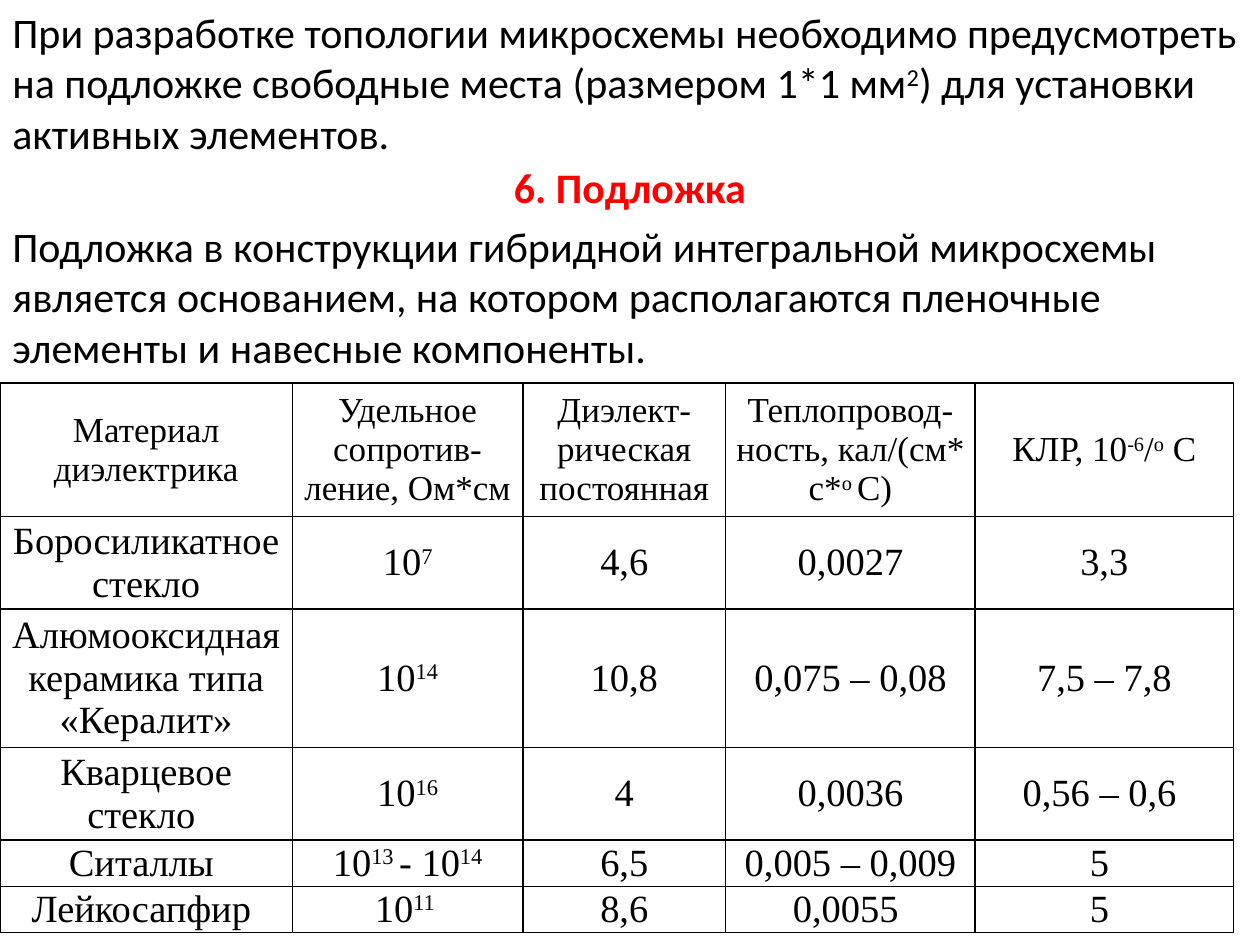
from lxml.etree import SubElement
from pptx import Presentation
from pptx.dml.color import RGBColor
from pptx.enum.text import MSO_ANCHOR, MSO_AUTO_SIZE, PP_ALIGN
from pptx.oxml.ns import qn
from pptx.util import Inches, Pt

COLORS = {"text": "000000", "heading": "FF0000", "border": "000000"}
BODY_FONT, TABLE_FONT = "Calibri", "Times New Roman"

# Text between ^ marks is superscript.
HEADING = "6. Подложка"
PARAGRAPHS = [
    (0, "При разработке топологии микросхемы необходимо предусмотреть на подложке "
        "свободные места (размером 1*1 мм^2^) для установки активных элементов."),
    (1.7, "Подложка в конструкции гибридной интегральной микросхемы является основанием, "
          "на котором располагаются пленочные элементы и навесные компоненты."),
]
MATERIALS = [
    ["Материал диэлектрика", "Удельное сопротив-ление, Ом*см",
     "Диэлект-рическая постоянная", "Теплопровод-ность, кал/(см* с*^о ^С)",
     "КЛР, 10^-6^/^о^ С"],
    ["Боросиликатное стекло", "10^7^", "4,6", "0,0027", "3,3"],
    ["Алюмооксидная керамика типа «Кералит»", "10^14^", "10,8", "0,075 – 0,08", "7,5 – 7,8"],
    ["Кварцевое стекло ", "10^16^", "4", "0,0036", "0,56 – 0,6 "],
    ["Ситаллы ", "10^13 ^- 10^14^", "6,5", "0,005 – 0,009", "5 "],
    ["Лейкосапфир ", "10^11 ^", "8,6", "0,0055 ", "5 "],
]
COLUMN_WIDTHS = [2.32, 1.83, 1.61, 1.98, 2.05]
LINE_HEIGHT = 0.31
ROW_HEIGHTS = [1.06] + [LINE_HEIGHT * lines for lines in (2, 3, 2, 1, 1)]
TABLE_TOP, TABLE_HEIGHT = 3.04, 4.36


def write(text_frame, text, font_name, size, color, align, bold=False):
    paragraph = text_frame.paragraphs[0]
    paragraph.alignment = align
    font = paragraph.font
    font.name, font.size, font.bold = font_name, Pt(size), bold
    font.color.rgb = RGBColor.from_string(COLORS[color])
    for index, part in enumerate(text.split("^")):
        if part:
            run = paragraph.add_run()
            run.text = part
            if index % 2:
                run.font._element.set("baseline", "30000")


def add_borders(cell):
    properties = cell._tc.get_or_add_tcPr()
    for position, side in enumerate(("lnL", "lnR", "lnT", "lnB")):
        line = properties.makeelement(qn(f"a:{side}"), {"w": str(Pt(1))})
        fill = SubElement(line, qn("a:solidFill"))
        SubElement(fill, qn("a:srgbClr"), val=COLORS["border"])
        properties.insert(position, line)


def add_paragraph_box(slide, width, top, text):
    box = slide.shapes.add_textbox(0, Inches(top), width, Inches(1.31))
    box.text_frame.word_wrap = True
    box.text_frame.auto_size = MSO_AUTO_SIZE.SHAPE_TO_FIT_TEXT
    write(box.text_frame, text, BODY_FONT, 24, "text", PP_ALIGN.LEFT)


def add_heading(slide, width):
    title = slide.shapes.title
    title.left, title.top = 0, Inches(1.23)
    title.width, title.height = width, Inches(0.5)
    title.text_frame.word_wrap = True
    title.text_frame.auto_size = MSO_AUTO_SIZE.SHAPE_TO_FIT_TEXT
    title.text_frame.vertical_anchor = MSO_ANCHOR.TOP
    write(title.text_frame, HEADING, BODY_FONT, 24, "heading", PP_ALIGN.CENTER, True)


def add_materials_table(slide):
    frame = slide.shapes.add_table(
        len(MATERIALS), len(COLUMN_WIDTHS), 0, Inches(TABLE_TOP),
        Inches(sum(COLUMN_WIDTHS)), Inches(TABLE_HEIGHT))
    table = frame.table
    table.horz_banding = False
    table.first_row = False
    for column, width in zip(table.columns, COLUMN_WIDTHS):
        column.width = Inches(width)
    for row, height in zip(table.rows, ROW_HEIGHTS):
        row.height = Inches(height)
    frame.height = Inches(TABLE_HEIGHT)
    for row_index, values in enumerate(MATERIALS):
        for column_index, text in enumerate(values):
            cell = table.cell(row_index, column_index)
            cell.margin_left = cell.margin_right = Inches(0.07)
            cell.margin_top = cell.margin_bottom = 0
            cell.vertical_anchor = MSO_ANCHOR.MIDDLE
            cell.fill.background()
            add_borders(cell)
            size = 22 if row_index else 20
            write(cell.text_frame, text, TABLE_FONT, size, "text", PP_ALIGN.CENTER)


def main():
    presentation = Presentation()
    presentation.slide_width, presentation.slide_height = Inches(10), Inches(7.5)
    slide = presentation.slides.add_slide(presentation.slide_layouts[5])
    width = presentation.slide_width
    add_heading(slide, width)
    for top, text in PARAGRAPHS:
        add_paragraph_box(slide, width, top, text)
    add_materials_table(slide)
    presentation.save("out.pptx")


if __name__ == "__main__":
    main()
